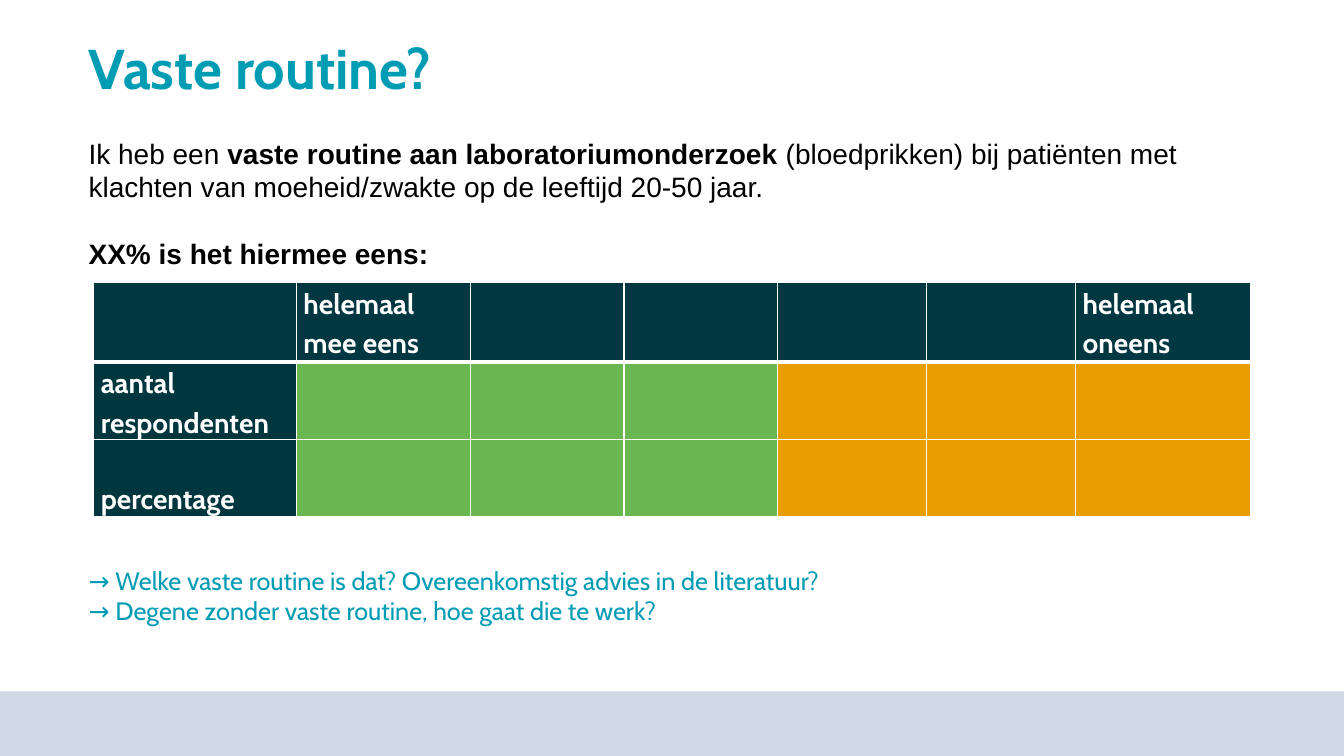
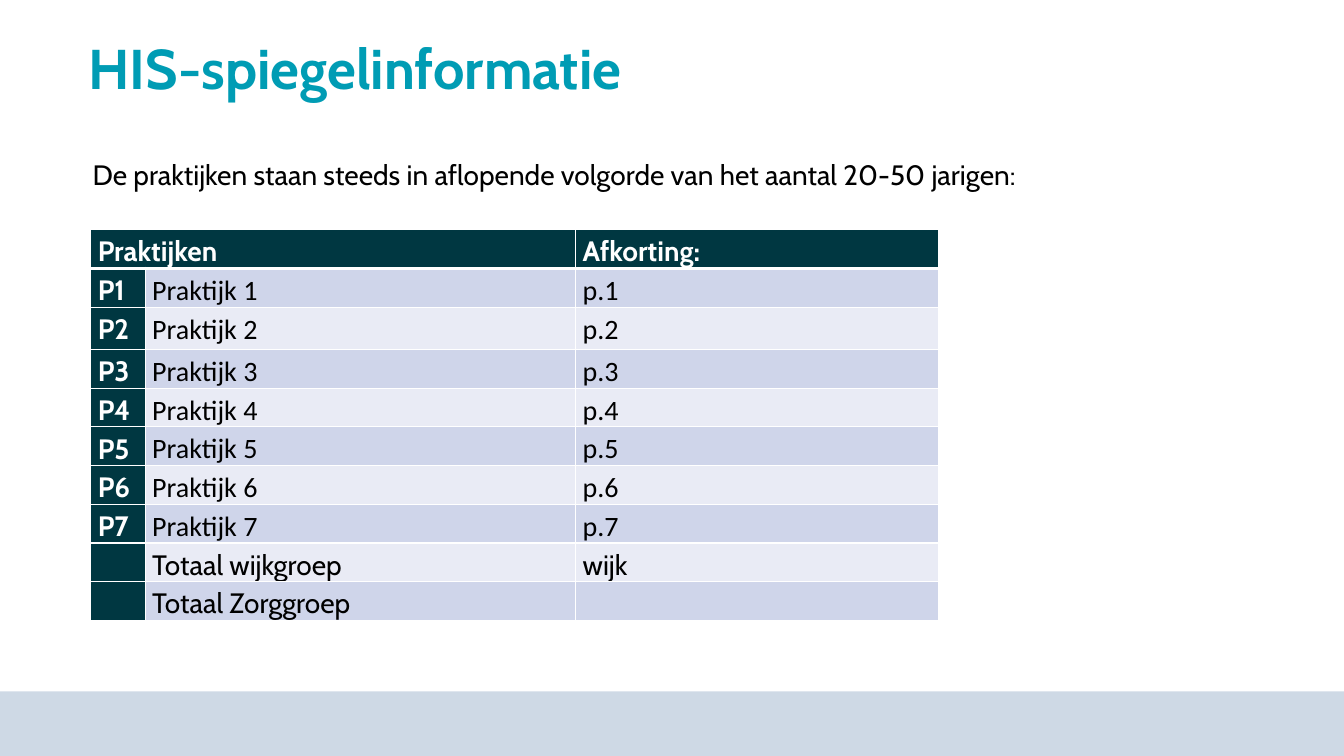
from pptx import Presentation
from pptx import util as u
from pptx.dml.color import RGBColor
from pptx.enum import shapes, text
from pptx.oxml import parse_xml
from pptx.oxml.ns import nsdecls

PX = 9144  # 100 px to the inch
SLIDE_W, SLIDE_H = 1333, 750
COLORS = {
    "white": "FFFFFF", "black": "000000", "title": "009CB4", "band": "CED9E5",
    "header": "003741", "stub": "00373E", "agree": "6AB650", "disagree": "E89E00",
    "odd": "CFD5EA", "even": "E9EBF5",
}


def px(*lengths):
    return [u.Emu(length * PX) for length in lengths]


def rgb(name):
    return RGBColor.from_string(COLORS[name])


def add_run(paragraph, words, size, font="Cabin", color="black", bold=False):
    run = paragraph.add_run()
    run.text = words
    run.font.size = u.Pt(size)
    run.font.name = font
    run.font.bold = bold
    run.font.color.rgb = rgb(color)


def add_text(slide, box, paragraphs, size, spacing=None, gap=0, **style):
    """Each paragraph is a list of (words, bold) runs; gap is in points."""
    frame = slide.shapes.add_textbox(*px(*box)).text_frame
    frame.word_wrap = True
    for i, runs in enumerate(paragraphs):
        paragraph = frame.paragraphs[0] if i == 0 else frame.add_paragraph()
        if spacing:
            paragraph.line_spacing = spacing
        if i and gap:
            paragraph.space_before = u.Pt(gap)
        for words, bold in runs:
            add_run(paragraph, words, size, bold=bold, **style)


def add_base(prs, title):
    """Slide with the shared footer band and title."""
    slide = prs.slides.add_slide(prs.slide_layouts[6])
    band = slide.shapes.add_shape(shapes.MSO_SHAPE.RECTANGLE,
                                  *px(0, 686, SLIDE_W, SLIDE_H - 686))
    band.shadow.inherit = False
    band.fill.solid()
    band.fill.fore_color.rgb = rgb("band")
    band.line.fill.background()
    add_text(slide, (78, 36, 1068, 71), [[(title, True)]], 40, spacing=0.9, color="title")
    return slide


def add_grid(slide, left, top, columns, rows):
    box = px(left, top, sum(columns), sum(rows))
    table = slide.shapes.add_table(len(rows), len(columns), *box).table
    table.horz_banding = False
    for column, width in zip(table.columns, px(*columns)):
        column.width = width
    for row, height in zip(table.rows, px(*rows)):
        row.height = height
    return table


def fill_cell(table, r, c, fill, lines=(), font="Cabin", color="white", bold=True):
    cell = table.cell(r, c)
    cell.margin_left, cell.margin_right = px(7, 7)
    cell.margin_top = cell.margin_bottom = 0
    # White rules, heavier below the header row
    weights = {"L": 1, "R": 1, "T": 3 if r == 1 else 1, "B": 3 if r == 0 else 1}
    for side, weight in weights.items():
        cell._tc.get_or_add_tcPr().append(parse_xml(
            f'<a:ln{side} {nsdecls("a")} w="{u.Pt(weight)}"><a:solidFill>'
            f'<a:srgbClr val="{COLORS["white"]}"/></a:solidFill></a:ln{side}>'))
    cell.fill.solid()
    cell.fill.fore_color.rgb = rgb(fill)
    frame = cell.text_frame
    for i, words in enumerate(lines):
        paragraph = frame.paragraphs[0] if i == 0 else frame.add_paragraph()
        paragraph.line_spacing = 1.15
        add_run(paragraph, words, 20, font, color, bold)
    return cell


def add_opinion_table(slide, left, top):
    columns = [201, 173, 152, 152, 148, 148, 173]
    table = add_grid(slide, left, top, columns, [79, 77, 77])
    headings = {1: ["helemaal mee eens"], 6: ["helemaal oneens"]}
    for c in range(len(columns)):
        fill_cell(table, 0, c, "header", headings.get(c, ()))
    for r, label in enumerate((["aantal", "respondenten"], ["percentage"]), 1):
        stub = fill_cell(table, r, 0, "stub", label)
        stub.vertical_anchor = text.MSO_ANCHOR.BOTTOM
        for c in range(1, len(columns)):
            fill_cell(table, r, c, "agree" if c <= 3 else "disagree")


def add_practice_table(slide, left, top):
    practices = [(f"P{n}", f"Praktijk {n}", f"p.{n}") for n in range(1, 8)]
    totals = [("", "Totaal wijkgroep", "wijk"), ("", "Totaal Zorggroep", "")]
    rows = [38, 38, 42] + [38] * 7
    table = add_grid(slide, left, top, [54, 427, 360], rows)
    # Header row
    table.cell(0, 0).merge(table.cell(0, 1))
    for c, heading in ((0, ["Praktijken"]), (1, ()), (2, ["Afkorting:"])):
        fill_cell(table, 0, c, "header", heading)
    # Practices and totals
    for r, (code, name, short) in enumerate(practices + totals, 1):
        fill_cell(table, r, 0, "header", [code] if code else ())
        for c, words in ((1, name), (2, short)):
            fill_cell(table, r, c, "odd" if r % 2 else "even", [words] if words else (),
                      font="Calibri" if code else "Cabin", color="black", bold=False)


def build_routine(prs):
    slide = add_base(prs, "Vaste routine?")
    add_opinion_table(slide, 93, 280)
    # Statement
    add_text(slide, (78, 130, 1161, 145), [
        [("Ik heb een ", False),
         ("vaste routine aan laboratoriumonderzoek ", True),
         ("(bloedprikken) bij patiënten met klachten van moeheid/zwakte "
          "op de leeftijd 20-50 jaar.", False)],
        [("XX% is het hiermee eens:", True)],
    ], 20, gap=24, font="Arial")
    # Questions for discussion
    add_text(slide, (78, 556, 1222, 101), [
        [("→ Welke vaste routine is dat? Overeenkomstig advies in de literatuur?", False)],
        [("→ Degene zonder vaste routine, hoe gaat die te werk?", False)],
    ], 18, color="title")


def build_practices(prs):
    slide = add_base(prs, "HIS-spiegelinformatie")
    add_practice_table(slide, 90, 228)
    add_text(slide, (82, 151, 1142, 44), [
        [("De praktijken staan steeds in aflopende volgorde van het aantal "
          "20-50 jarigen:", False)],
    ], 20)


def main():
    prs = Presentation()
    prs.slide_width, prs.slide_height = px(SLIDE_W, SLIDE_H)
    build_routine(prs)
    build_practices(prs)
    prs.save("out.pptx")


if __name__ == "__main__":
    main()
